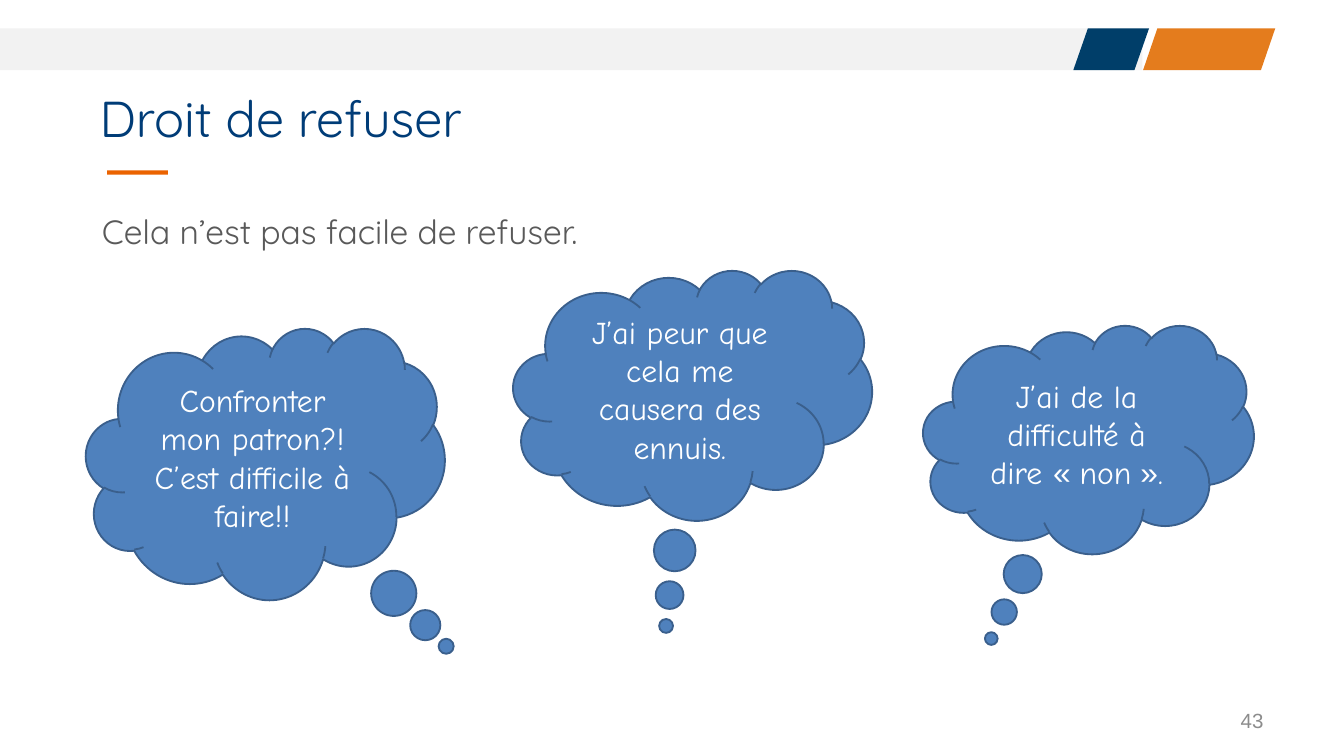
import pptx
import pptx.util
import pptx.dml.color
import pptx.enum.shapes
import pptx.enum.text

Pt = pptx.util.Pt
RGBColor = pptx.dml.color.RGBColor
SHAPE = pptx.enum.shapes.MSO_SHAPE
ALIGN = pptx.enum.text.PP_ALIGN
ANCHOR = pptx.enum.text.MSO_ANCHOR

WHITE = RGBColor(0xFF, 0xFF, 0xFF)
BAND_GREY = RGBColor(0xF2, 0xF2, 0xF2)
NAVY = RGBColor(0x00, 0x3E, 0x69)
ORANGE = RGBColor(0xE4, 0x7C, 0x1D)
ACCENT = RGBColor(0xEB, 0x63, 0x00)
TITLE_BLUE = RGBColor(0x00, 0x3C, 0x77)
BODY_GREY = RGBColor(0x59, 0x59, 0x59)
NUMBER_GREY = RGBColor(0x8C, 0x8C, 0x8C)
CLOUD_BLUE = RGBColor(0x4F, 0x81, 0xBD)
CLOUD_EDGE = RGBColor(0x3A, 0x5F, 0x8C)

HEADING_FONT = "Quicksand"
THOUGHT_FONT = "Comic Neue"
PLAIN_FONT = "Arial"

BAND_TOP = 15.2
BAND_HEIGHT = 22.4


def add_run(paragraph, words, font, size, color):
    run = paragraph.add_run()
    run.text = words
    run.font.name = font
    run.font.size = Pt(size)
    run.font.color.rgb = color


def add_block(slide, kind, box, fill, adjustments=()):
    block = slide.shapes.add_shape(kind, *map(Pt, box))
    block.shadow.inherit = False
    block.fill.solid()
    block.fill.fore_color.rgb = fill
    block.line.fill.background()
    for index, value in enumerate(adjustments):
        block.adjustments[index] = value
    return block


def add_label(slide, box, words, font, size, color, anchor=ANCHOR.TOP,
              align=ALIGN.LEFT, inset=(5.2, 2.6), spacing=1.0, before=0):
    frame = slide.shapes.add_textbox(*map(Pt, box)).text_frame
    frame.word_wrap = True
    frame.vertical_anchor = anchor
    frame.margin_left = frame.margin_right = Pt(inset[0])
    frame.margin_top = frame.margin_bottom = Pt(inset[1])
    paragraph = frame.paragraphs[0]
    paragraph.alignment = align
    paragraph.line_spacing = spacing
    paragraph.space_before = Pt(before)
    add_run(paragraph, words, font, size, color)


def add_thought(slide, box, tail, pieces):
    cloud = add_block(slide, SHAPE.CLOUD_CALLOUT, box, CLOUD_BLUE, tail)
    cloud.line.color.rgb = CLOUD_EDGE
    cloud.line.width = Pt(1)
    frame = cloud.text_frame
    frame.word_wrap = True
    frame.vertical_anchor = ANCHOR.MIDDLE
    paragraph = frame.paragraphs[0]
    paragraph.alignment = ALIGN.CENTER
    for words, font in pieces:
        add_run(paragraph, words, font, 17, WHITE)


def add_header_band(slide):
    for kind, left, width, fill, adjustments in (
        (SHAPE.RECTANGLE, 0, 612, BAND_GREY, ()),
        (SHAPE.PARALLELOGRAM, 612.4, 70.8, ORANGE, (0.343,)),
        (SHAPE.PARALLELOGRAM, 575, 40.6, NAVY, (0.35,)),
    ):
        box = (left, BAND_TOP, width, BAND_HEIGHT)
        add_block(slide, kind, box, fill, adjustments)


def main():
    deck = pptx.Presentation()
    deck.slide_width, deck.slide_height = Pt(720), Pt(405)
    slide = deck.slides.add_slide(deck.slide_layouts[6])

    add_header_band(slide)
    add_label(slide, (49.4, 103.7, 310.4, 31), "Cela n’est pas facile de refuser.",
              HEADING_FONT, 18, BODY_GREY, spacing=1.3, before=6)
    add_block(slide, SHAPE.RECTANGLE, (57.4, 91.3, 32.6, 2.3), ACCENT)
    add_label(slide, (48.2, 15.1, 623.5, 67), "Droit de refuser",
              HEADING_FONT, 27, TITLE_BLUE, anchor=ANCHOR.BOTTOM, spacing=0.9)
    add_label(slide, (516.2, 375.1, 167.8, 21.6), "43", PLAIN_FONT, 11,
              NUMBER_GREY, anchor=ANCHOR.MIDDLE, align=ALIGN.RIGHT, inset=(7.2, 3.6))

    thoughts = (
        ((46.1, 175.7, 192.2, 145.4), (0.504, 0.673),
         [("Confronter mon patron?! C’est difficile à faire!!", THOUGHT_FONT)]),
        ((275, 144.7, 192.2, 133.9), (-0.074, 0.924),
         [("J’ai peur que cela me causera des ennuis.", THOUGHT_FONT)]),
        ((494.6, 174.2, 177.1, 122.4), (-0.294, 0.872),
         [("J’ai de la difficulté à dire ", THOUGHT_FONT), ("« ", PLAIN_FONT),
          ("non", THOUGHT_FONT), (" »", PLAIN_FONT), (".", THOUGHT_FONT)]),
    )
    for box, tail, pieces in thoughts:
        add_thought(slide, box, tail, pieces)

    deck.save("out.pptx")


if __name__ == "__main__":
    main()
